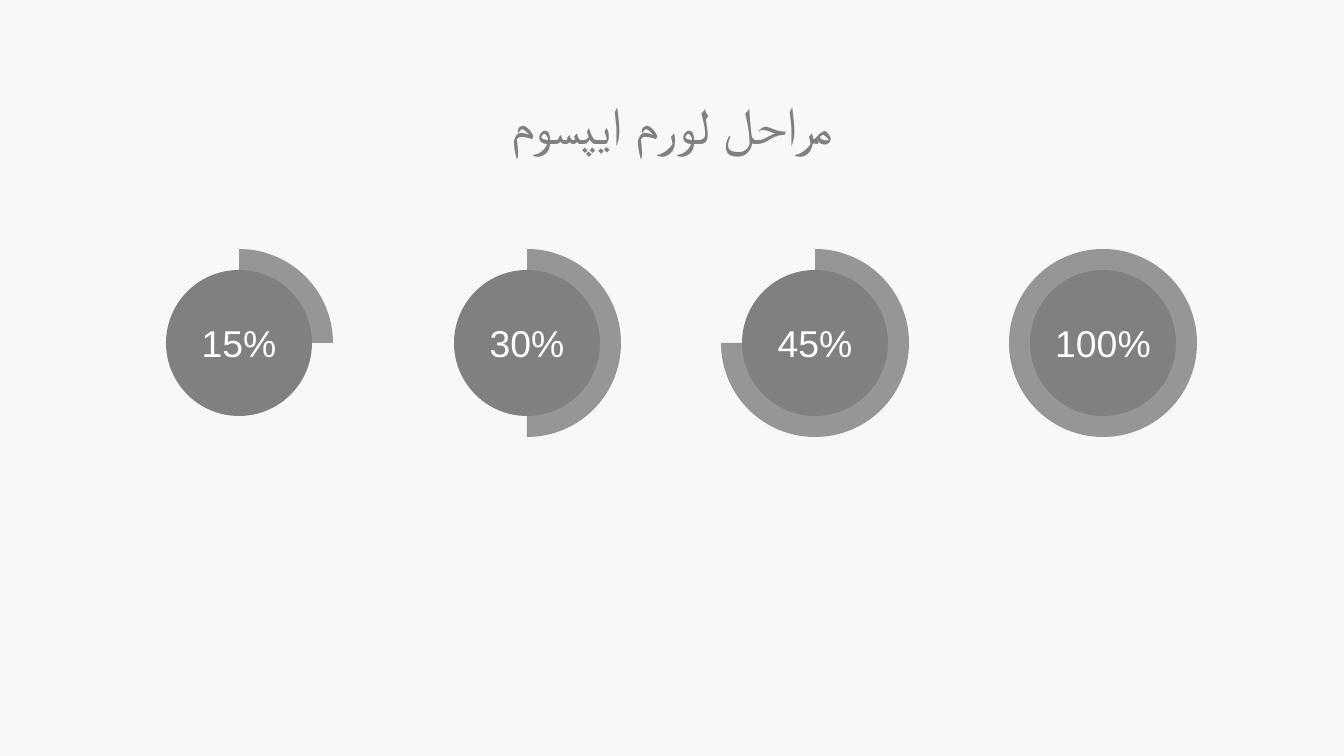
from pptx import Presentation
from pptx import util as u
from pptx.dml import color
from pptx.enum import shapes, text

HUES = {"back": "F8F8F8", "ring": "969696", "disc": "808080", "label": "FFFFFF"}
SCALE = 914400 / 134.4
KIND = shapes.MSO_SHAPE


def px(*sizes):
    return [u.Emu(round(size * SCALE)) for size in sizes]


class Deck:
    """Holds the style and the current slide, and draws each kind of element."""

    def __init__(self, wide, high):
        self.show = Presentation()
        self.show.slide_width, self.show.slide_height = px(wide, high)
        self.slide = self.show.slides.add_slide(self.show.slide_layouts[6])
        self.paint(self.slide.background.fill, "back")

    def paint(self, fill, hue):
        fill.solid()
        fill.fore_color.rgb = color.RGBColor.from_string(HUES[hue])

    def shape(self, kind, left, top, size, hue):
        item = self.slide.shapes.add_shape(kind, *px(left, top, size, size))
        item.shadow.inherit = False
        self.paint(item.fill, hue)
        item.line.fill.background()
        return item

    def pie(self, left, top, size, turn):
        item = self.shape(KIND.PIE, left, top, size, "ring")
        item.adjustments[0] = 162.01
        item.adjustments[1] = 54 * turn

    def text(self, words, box, size, font, hue, anchor):
        frame = self.slide.shapes.add_textbox(*px(*box)).text_frame
        frame.word_wrap = True
        frame.vertical_anchor = anchor
        frame.margin_left = frame.margin_right = u.Inches(0.1)
        frame.margin_top = frame.margin_bottom = u.Inches(0.1)
        line = frame.paragraphs[0]
        line.text = words
        line.alignment = text.PP_ALIGN.CENTER
        line.font.name = font
        line.font.size = u.Pt(size)
        line.font.color.rgb = color.RGBColor.from_string(HUES[hue])


def main():
    deck = Deck(1344, 756)
    deck.text("مراحل لورم ایپسوم", (105, 79, 1134, 85), 28, "Lato", "disc",
              text.MSO_ANCHOR.TOP)
    for turn, label in enumerate(("15%", "30%", "45%", "100%")):
        left, top = 145 + 288 * turn, 249
        deck.pie(left, top, 188, turn)
        deck.shape(KIND.OVAL, left + 21, top + 21, 146, "disc")
        deck.text(label, (left + 30, top + 68, 128, 52), 20, "Arial", "label",
                  text.MSO_ANCHOR.MIDDLE)
    deck.show.save("out.pptx")


if __name__ == "__main__":
    main()
